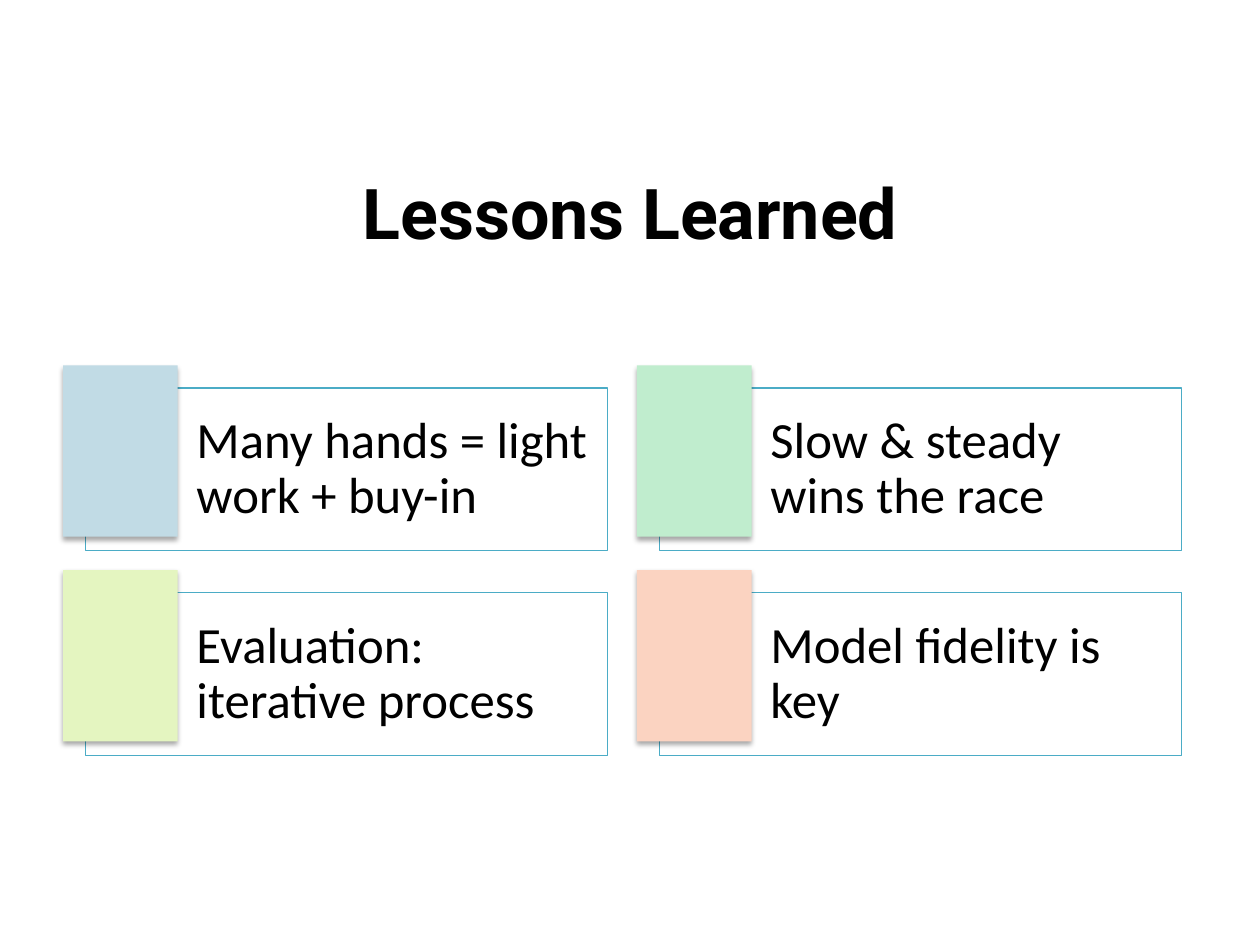
from lxml import etree
from pptx import Presentation
from pptx.dml.color import RGBColor
from pptx.enum.shapes import MSO_SHAPE
from pptx.enum.text import MSO_ANCHOR, PP_ALIGN
from pptx.oxml.ns import qn
from pptx.util import Inches, Pt

RECTANGLE = MSO_SHAPE.RECTANGLE
MIDDLE = MSO_ANCHOR.MIDDLE
LEFT, CENTER = PP_ALIGN.LEFT, PP_ALIGN.CENTER

BLACK = RGBColor(0x00, 0x00, 0x00)
WHITE = RGBColor(0xFF, 0xFF, 0xFF)
TEAL = RGBColor(0x4B, 0xAC, 0xC6)
BLUE = RGBColor(0xC1, 0xDB, 0xE5)
GREEN = RGBColor(0xC0, 0xED, 0xCE)
LIME = RGBColor(0xE4, 0xF5, 0xC0)
PEACH = RGBColor(0xFB, 0xD3, 0xC1)

LESSONS = [
    ("Many hands = light work + buy-in", BLUE),
    ("Slow & steady wins the race", GREEN),
    ("Evaluation: iterative process", LIME),
    ("Model fidelity is key", PEACH),
]
COLUMNS = 2
GRID_LEFT, GRID_TOP = 0.5, 2.9
COLUMN_STEP, ROW_STEP = 4.555, 1.625
CARD_OFFSET = 0.18


def write_text(shape, text, font_name, size, alignment, bold=False):
    """Put one vertically centred paragraph of black text in a shape."""
    text_frame = shape.text_frame
    text_frame.word_wrap = True
    text_frame.vertical_anchor = MIDDLE
    text_frame.text = text
    paragraph = text_frame.paragraphs[0]
    paragraph.alignment = alignment
    font = paragraph.runs[0].font
    font.name, font.size, font.bold = font_name, Pt(size), bold
    font.color.rgb = BLACK


def add_title(slide, text):
    """Add the centred slide title."""
    box = slide.shapes.add_textbox(Inches(0.5), Inches(1.03), Inches(9), Inches(1.3))
    write_text(box, text, "Roboto", 40, CENTER, bold=True)


def add_rectangle(slide, left, top, width, height, color):
    """Add a filled rectangle without a shadow."""
    shape = slide.shapes.add_shape(
        RECTANGLE, Inches(left), Inches(top), Inches(width), Inches(height)
    )
    shape.shadow.inherit = False
    shape.fill.solid()
    shape.fill.fore_color.rgb = color
    return shape


def add_card(slide, left, top, text):
    """Add an outlined, translucent card holding one lesson."""
    card = add_rectangle(slide, left, top, 4.14, 1.29, WHITE)
    color = card.fill._xPr.find(qn("a:solidFill")).find(qn("a:srgbClr"))
    etree.SubElement(color, qn("a:alpha"), val="40000")
    card.line.color.rgb = TEAL
    card.line.width = Pt(0.75)
    write_text(card, text, "Calibri", 29, LEFT)
    text_frame = card.text_frame
    text_frame.margin_left = Inches(0.88)
    text_frame.margin_right = Inches(0.12)
    text_frame.margin_top = text_frame.margin_bottom = Inches(0.12)
    text_frame.paragraphs[0].line_spacing = 0.9


def add_tile(slide, left, top, color):
    """Add a coloured tile with a soft shadow below it."""
    tile = add_rectangle(slide, left, top, 0.91, 1.36, color)
    tile.line.fill.background()
    effects = tile._element.spPr.find(qn("a:effectLst"))
    shadow = etree.SubElement(
        effects, qn("a:outerShdw"), blurRad=str(Pt(3.1)), dist=str(Pt(1.8)),
        dir="5400000", rotWithShape="0",
    )
    shadow_color = etree.SubElement(shadow, qn("a:srgbClr"), val=str(BLACK))
    etree.SubElement(shadow_color, qn("a:alpha"), val="35000")


def main():
    """Build the slide and save it."""
    presentation = Presentation()
    presentation.slide_width, presentation.slide_height = Inches(10), Inches(7.5)
    slide = presentation.slides.add_slide(presentation.slide_layouts[6])
    add_title(slide, "Lessons Learned")
    for index, (text, color) in enumerate(LESSONS):
        row, column = divmod(index, COLUMNS)
        left = GRID_LEFT + column * COLUMN_STEP
        top = GRID_TOP + row * ROW_STEP
        add_card(slide, left + CARD_OFFSET, top + CARD_OFFSET, text)
        add_tile(slide, left, top, color)
    presentation.save("out.pptx")


if __name__ == "__main__":
    main()
